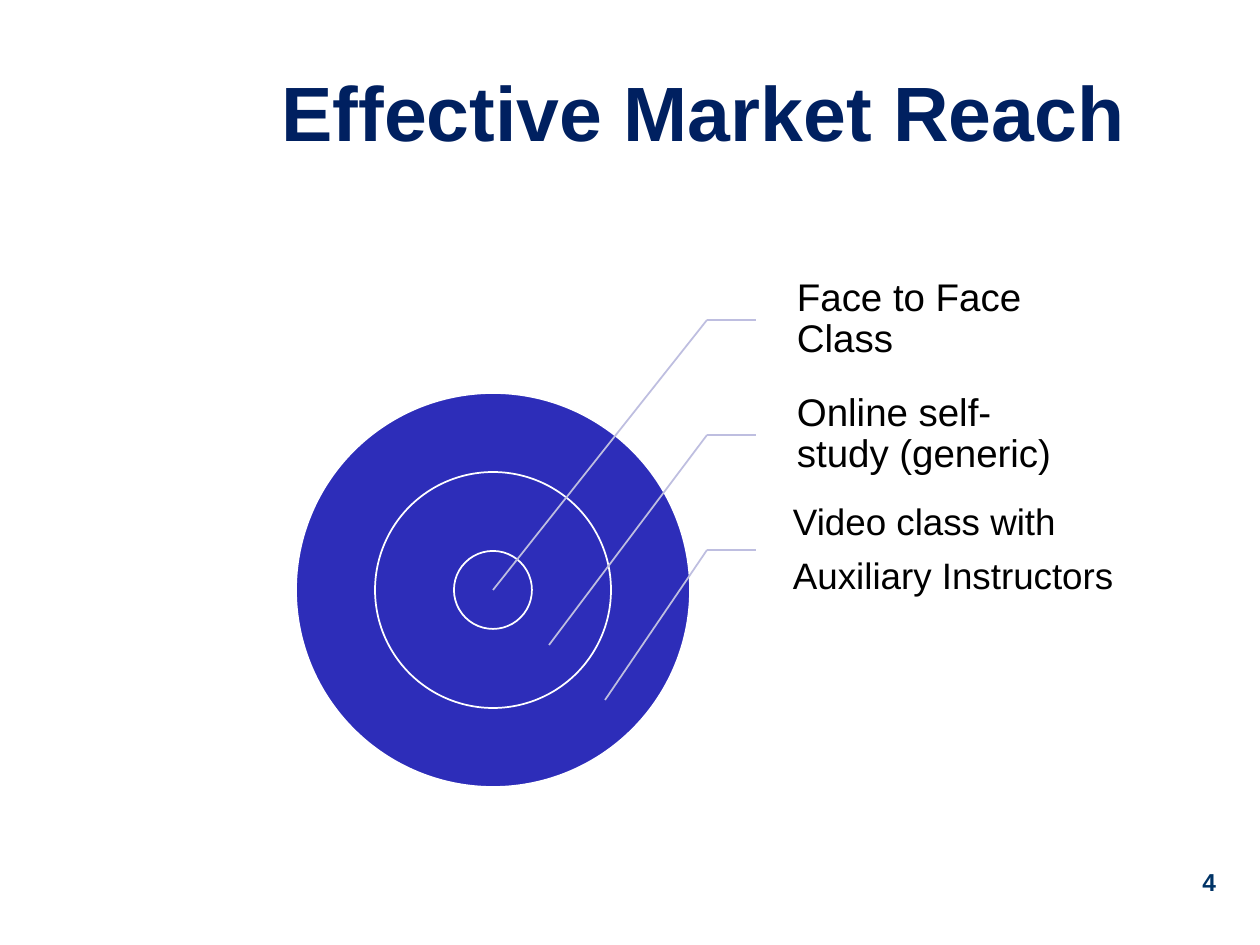
"""Build the "Effective Market Reach" target-diagram slide."""
from dataclasses import dataclass

from lxml import etree
from pptx import Presentation
from pptx.dml.color import RGBColor
from pptx.enum.shapes import MSO_CONNECTOR, MSO_SHAPE
from pptx.enum.text import MSO_ANCHOR, PP_ALIGN
from pptx.oxml.ns import qn
from pptx.util import Pt

STRAIGHT = MSO_CONNECTOR.STRAIGHT
OVAL = MSO_SHAPE.OVAL
TOP, MIDDLE = MSO_ANCHOR.TOP, MSO_ANCHOR.MIDDLE
LEFT, CENTER, RIGHT = PP_ALIGN.LEFT, PP_ALIGN.CENTER, PP_ALIGN.RIGHT

EMU_PER_PX = 914400 / 126
CENTER_X, CENTER_Y = 493, 590
RING_DIAMETERS = (394, 236, 78)
BEND_X, LEADER_END_X = 707, 756
FIRST_LEADER_Y, LEADER_PITCH = 320, 115
TARGET_STEP_X, TARGET_STEP_Y = 56, 55

RING_FILL, RING_LINE, LEADER_COLOR = "2D2DB9", "FFFFFF", "BEBEE0"


@dataclass
class Label:
    lines: tuple[str, ...]
    box: tuple[int, int, int, int]
    size: int = 22
    color: str = "000000"
    bold: bool = False
    align: PP_ALIGN = LEFT
    anchor: MSO_ANCHOR = MIDDLE
    insets: tuple[int, int, int, int] = (13, 6, 13, 6)
    line_spacing: float = 1.0
    space_after: int = 0


def callout(lines: tuple[str, ...], box: tuple[int, int, int, int], size: int = 22) -> Label:
    return Label(lines, box, size, insets=(21, 4, 4, 4), line_spacing=0.9, space_after=8)


TITLE = Label(("Effective Market Reach",), (168, 32, 1071, 157), 44, "002060", True, CENTER)
PAGE_NUMBER = Label(("4",), (935, 861, 294, 66), 14, "003366", True, RIGHT, TOP)
CALLOUTS = (
    callout(("Face to Face Class",), (776, 262, 336, 115)),
    callout(("Online self-study (generic)",), (776, 378, 305, 113)),
    callout(("Video class with", "Auxiliary Instructors"), (772, 493, 391, 115), 21),
)


def px(length: float) -> int:
    return round(length * EMU_PER_PX)


def rgb(value: str) -> RGBColor:
    return RGBColor.from_string(value)


def apply(target, values: dict) -> None:
    for name, value in values.items():
        setattr(target, name, value)


def add_label(slide, label: Label) -> None:
    frame = slide.shapes.add_textbox(*map(px, label.box)).text_frame
    left, top, right, bottom = map(px, label.insets)
    apply(frame, {
        "word_wrap": True, "vertical_anchor": label.anchor,
        "margin_left": left, "margin_top": top,
        "margin_right": right, "margin_bottom": bottom,
    })
    for index, line in enumerate(label.lines):
        paragraph = frame.add_paragraph() if index else frame.paragraphs[0]
        apply(paragraph, {
            "alignment": label.align, "line_spacing": label.line_spacing,
            "space_after": Pt(label.space_after),
        })
        run = paragraph.add_run()
        run.text = line
        apply(run.font, {"name": "Arial", "size": Pt(label.size), "bold": label.bold})
        run.font.color.rgb = rgb(label.color)


def add_ring(slide, diameter: int) -> None:
    left, top = CENTER_X - diameter / 2, CENTER_Y - diameter / 2
    ring = slide.shapes.add_shape(OVAL, px(left), px(top), px(diameter), px(diameter))
    ring.shadow.inherit = False
    ring.fill.solid()
    ring.fill.fore_color.rgb = rgb(RING_FILL)
    ring.line.color.rgb = rgb(RING_LINE)
    ring.line.width = Pt(1)


def add_leader(slide, start: tuple[int, int], end: tuple[int, int]) -> None:
    leader = slide.shapes.add_connector(STRAIGHT, *map(px, start + end))
    leader.line.color.rgb = rgb(LEADER_COLOR)
    leader.line.width = Pt(1)
    etree.SubElement(leader._element.spPr, qn("a:effectLst"))


def main() -> None:
    deck = Presentation()
    deck.slide_width, deck.slide_height = px(1260), px(945)
    slide = deck.slides.add_slide(deck.slide_layouts[6])
    add_label(slide, TITLE)
    for diameter in RING_DIAMETERS:
        add_ring(slide, diameter)
    for index, label in enumerate(CALLOUTS):
        bend = (BEND_X, FIRST_LEADER_Y + index * LEADER_PITCH)
        target = (CENTER_X + index * TARGET_STEP_X, CENTER_Y + index * TARGET_STEP_Y)
        add_label(slide, label)
        add_leader(slide, bend, (LEADER_END_X, bend[1]))
        add_leader(slide, bend, target)
    add_label(slide, PAGE_NUMBER)
    deck.save("out.pptx")


if __name__ == "__main__":
    main()
